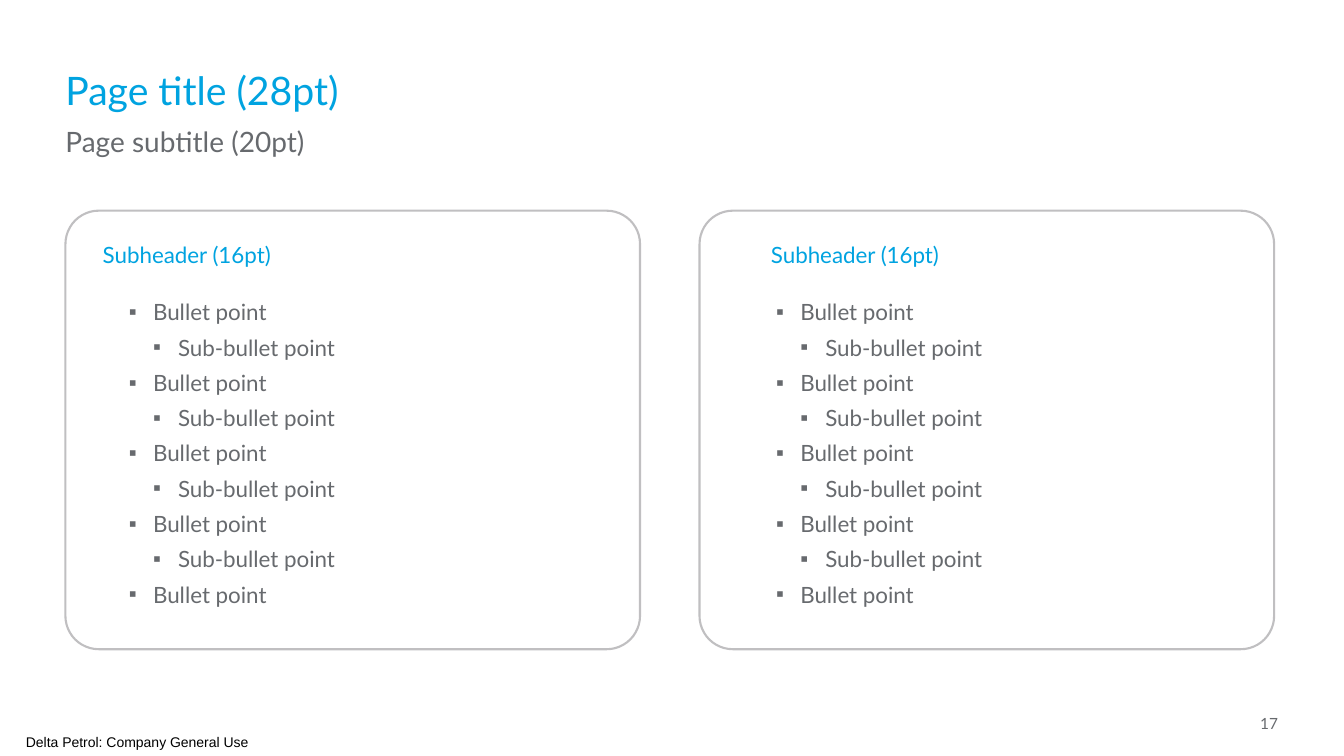
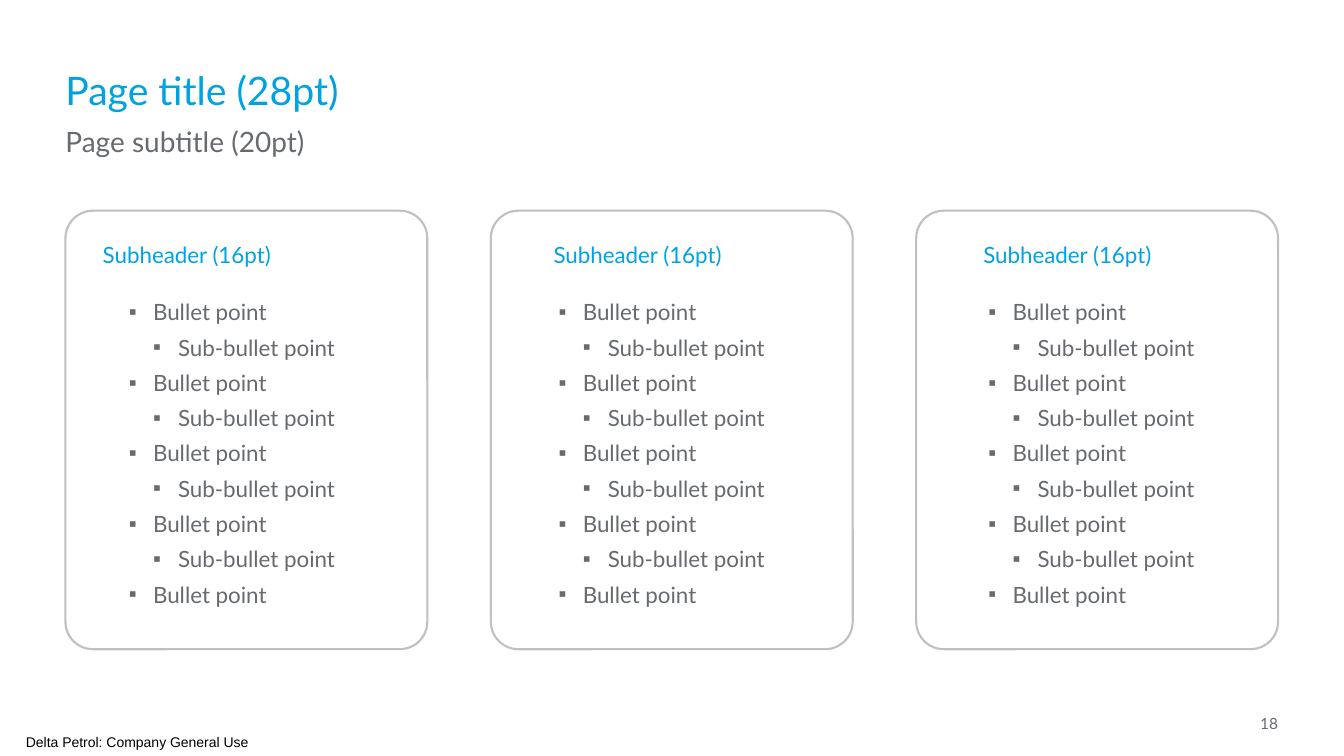
"""Build two slides of outlined panels holding a subheader and a bullet list."""
from lxml.etree import SubElement
from pptx import Presentation
from pptx.dml.color import RGBColor
from pptx.enum.shapes import MSO_SHAPE
from pptx.enum.text import MSO_ANCHOR, PP_ALIGN
from pptx.oxml.ns import qn
from pptx.util import Cm, Pt

BLUE = RGBColor(0x00, 0xA3, 0xE0)
GREY = RGBColor(0x67, 0x6A, 0x6E)
OUTLINE = RGBColor(0xC0, 0xBF, 0xC1)
BLACK = RGBColor(0x00, 0x00, 0x00)

MARGIN = 1.65
PANEL_TOP, PANEL_HEIGHT = 5.31, 11.05
LIST_LEFT = 2.59
SUBHEADER_INDENT = 0.53
BULLET_LEVELS = {1: (1.27, -0.61), 2: (1.9, -0.63)}
BULLETS = [("Bullet point", 1), ("Sub-bullet point", 2)] * 4 + [("Bullet point", 1)]


class Deck:
    def __init__(self):
        self.presentation = Presentation()
        self.presentation.slide_width = Cm(33.87)
        self.presentation.slide_height = Cm(19.05)
        self.slide = None

    def add_slide(self, number):
        layout = self.presentation.slide_layouts[6]
        self.slide = self.presentation.slides.add_slide(layout)
        self.text("Page title (28pt)", MARGIN, 1.55, 12.57, 1.45, 28, BLUE)
        self.text("Page subtitle (20pt)", MARGIN, 3.02, 12.57, 1.45, 20, GREY)
        self.footer(str(number), 31.22, 17.91, 0.99, GREY, 11, "Lato", PP_ALIGN.RIGHT)
        self.footer("Delta Petrol: Company General Use", 0, 18.36, 6.91,
                    BLACK, 10, "Arial", PP_ALIGN.CENTER)

    def text_frame(self, left, top, width, height):
        frame = self.slide.shapes.add_textbox(
            Cm(left), Cm(top), Cm(width), Cm(height)).text_frame
        frame.word_wrap = True
        frame.margin_left = frame.margin_right = 0
        frame.margin_top = frame.margin_bottom = Cm(0.13)
        return frame

    def style(self, paragraph, text, size, color, font="Lato"):
        paragraph.text = text
        paragraph.font.size = Pt(size)
        paragraph.font.name = font
        paragraph.font.color.rgb = color

    def text(self, text, left, top, width, height, size, color):
        paragraph = self.text_frame(left, top, width, height).paragraphs[0]
        self.style(paragraph, text, size, color)
        paragraph.space_before = Pt(6)

    def footer(self, text, left, top, width, color, size, font, alignment):
        frame = self.text_frame(left, top, width, 0.66)
        frame.margin_top = frame.margin_bottom = 0
        frame.vertical_anchor = MSO_ANCHOR.MIDDLE
        self.style(frame.paragraphs[0], text, size, color, font)
        frame.paragraphs[0].alignment = alignment

    def bullet_list(self, items, left, top, width, height):
        frame = self.text_frame(left, top, width, height)
        for index, (text, level) in enumerate(items):
            paragraph = frame.add_paragraph() if index else frame.paragraphs[0]
            self.style(paragraph, text, 16, GREY)
            paragraph.level = level
            paragraph.space_before = Pt(6)
            margin, indent = BULLET_LEVELS[level]
            properties = paragraph._p.get_or_add_pPr()
            properties.set("marL", str(Cm(margin)))
            properties.set("indent", str(Cm(indent)))
            SubElement(properties, qn("a:buFont")).set("typeface", "Arial")
            SubElement(properties, qn("a:buChar")).set("char", "▪")

    def panel(self, left, width):
        shape = self.slide.shapes.add_shape(
            MSO_SHAPE.ROUNDED_RECTANGLE,
            Cm(left), Cm(PANEL_TOP), Cm(width), Cm(PANEL_HEIGHT))
        shape.adjustments[0] = 0.076
        shape.shadow.inherit = False
        shape.fill.background()
        shape.line.color.rgb = OUTLINE
        shape.line.width = Pt(1.5)

    def columns(self, count, panel_width, panel_gap, list_step):
        for column in range(count):
            self.panel(MARGIN + column * (panel_width + panel_gap), panel_width)
            list_left = LIST_LEFT + column * list_step
            subheader_left = list_left + (SUBHEADER_INDENT if column else 0)
            self.text("Subheader (16pt)", subheader_left, 5.94, 5.69, 1.45, 16, BLUE)
            self.bullet_list(BULLETS, list_left, 7.39, 7.87, 8.66)


def main():
    deck = Deck()
    deck.add_slide(17)
    deck.columns(count=2, panel_width=14.48, panel_gap=1.5, list_step=16.31)
    deck.add_slide(18)
    deck.columns(count=3, panel_width=9.12, panel_gap=1.6, list_step=10.83)
    deck.presentation.save("out.pptx")


if __name__ == "__main__":
    main()
